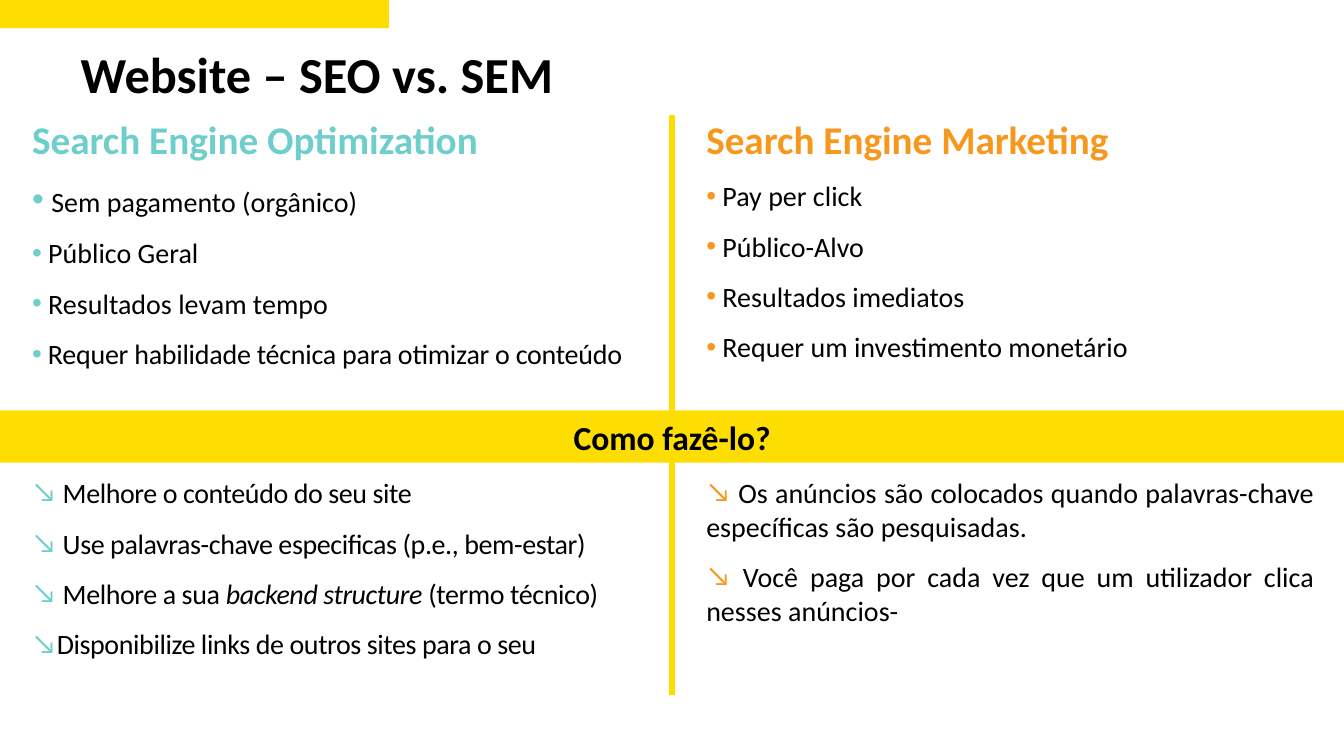
"""Builds the slide that compares SEO and SEM in two columns."""
from dataclasses import dataclass

from lxml.etree import SubElement
from pptx import Presentation
from pptx.dml.color import RGBColor
from pptx.enum.shapes import MSO_CONNECTOR as Connector, MSO_SHAPE as Preset
from pptx.enum.text import MSO_ANCHOR as Anchor, MSO_AUTO_SIZE as AutoSize, PP_ALIGN as Align
from pptx.oxml.ns import qn
from pptx.slide import Slide
from pptx.text.text import TextFrame, _Paragraph as Paragraph
from pptx.util import Cm, Pt

YELLOW = RGBColor(0xFD, 0xDE, 0x00)
TEAL = RGBColor(0x6E, 0xCE, 0xCB)
ORANGE = RGBColor(0xF7, 0x98, 0x1D)
BLACK = RGBColor(0, 0, 0)
FONT = "Calibri"
SLIDE_WIDTH, SLIDE_HEIGHT = Cm(33.87), Cm(19.05)
LEFT_COLUMN, RIGHT_COLUMN = 0.56, 17.55
COLUMN_WIDTH = 15.82
TOP_ROW, BOTTOM_ROW = 2.77, 11.86


@dataclass(frozen=True)
class Piece:
    """A stretch of text with its own size, slant and letter spacing."""
    text: str
    size: float = 20
    italic: bool = False
    spacing: int = 0


@dataclass(frozen=True)
class Block:
    """A text box with an optional heading and a bulleted list."""
    left: float
    top: float
    height: float
    color: RGBColor
    bullet: str
    items: tuple[tuple[Piece, ...], ...]
    heading: str = ""


@dataclass(frozen=True)
class Bar:
    """A yellow rectangle."""
    top: float
    width: float
    height: float


BARS = (Bar(0, 9.8, 0.71), Bar(10.34, 33.87, 1.32))
BLOCKS = (
    Block(LEFT_COLUMN, BOTTOM_ROW, 4.95, TEAL, "↘", (
        (Piece(" Melhore o conteúdo do seu site", spacing=-30),),
        (Piece(" Use palavras-chave especificas (p.e., bem-estar)", spacing=-30),),
        (Piece(" Melhore a sua ", spacing=-30),
         Piece("backend structure", italic=True, spacing=-30),
         Piece(" (termo técnico)", spacing=-30)),
        (Piece("Disponibilize links de outros sites para o seu", spacing=-30),),
    )),
    Block(RIGHT_COLUMN, BOTTOM_ROW, 4.11, ORANGE, "↘", (
        (Piece(" Os anúncios são colocados quando palavras-chave específicas são pesquisadas."),),
        (Piece(" Você paga por cada vez que um utilizador clica nesses anúncios-"),),
    )),
    Block(LEFT_COLUMN, TOP_ROW, 6.76, TEAL, "•", (
        (Piece(" ", size=24), Piece("Sem pagamento (orgânico)")),
        (Piece(" Público Geral"),),
        (Piece(" Resultados levam tempo"),),
        (Piece(" Requer habilidade técnica para otimizar o conteúdo", spacing=-20),),
    ), "Search Engine Optimization"),
    Block(RIGHT_COLUMN, TOP_ROW, 6.58, ORANGE, "•", (
        (Piece(" Pay per click"),),
        (Piece(" Público-Alvo"),),
        (Piece(" Resultados imediatos"),),
        (Piece(" Requer um investimento monetário"),),
    ), "Search Engine Marketing"),
)


def add_piece(paragraph: Paragraph, piece: Piece, color: RGBColor = BLACK, bold: bool = False) -> None:
    """Adds one formatted run to a paragraph."""
    run = paragraph.add_run()
    run.text = piece.text
    run.font.name = FONT
    run.font.size = Pt(piece.size)
    run.font.bold = bold
    run.font.italic = piece.italic
    run.font.color.rgb = color
    if piece.spacing:
        run.font._element.set("spc", str(piece.spacing))


def add_bullet(paragraph: Paragraph, character: str, color: RGBColor) -> None:
    """Gives a paragraph a coloured bullet without a hanging indent."""
    properties = paragraph._p.get_or_add_pPr()
    bullet_color = SubElement(properties, qn("a:buClr"))
    SubElement(bullet_color, qn("a:srgbClr"), val=str(color))
    SubElement(properties, qn("a:buFont"), typeface="Arial" if character == "•" else FONT)
    SubElement(properties, qn("a:buChar"), char=character)


def add_text_frame(slide: Slide, left: float, top: float, width: float, height: float) -> TextFrame:
    """Adds a wrapping text box and returns its frame."""
    text_frame = slide.shapes.add_textbox(Cm(left), Cm(top), Cm(width), Cm(height)).text_frame
    text_frame.word_wrap = True
    text_frame.auto_size = AutoSize.SHAPE_TO_FIT_TEXT
    return text_frame


def add_block(slide: Slide, block: Block) -> None:
    """Adds a heading and its bulleted list."""
    text_frame = add_text_frame(slide, block.left, block.top, COLUMN_WIDTH, block.height)
    paragraph = text_frame.paragraphs[0]
    if block.heading:
        paragraph.space_after = Pt(12)
        add_piece(paragraph, Piece(block.heading, size=28), block.color, bold=True)
    for index, pieces in enumerate(block.items):
        if index or block.heading:
            paragraph = text_frame.add_paragraph()
        paragraph.alignment = Align.JUSTIFY
        paragraph.space_after = Pt(12)
        add_bullet(paragraph, block.bullet, block.color)
        for piece in pieces:
            add_piece(paragraph, piece)


def add_bar(slide: Slide, bar: Bar) -> None:
    """Adds a yellow bar at the left edge."""
    shape = slide.shapes.add_shape(Preset.RECTANGLE, 0, Cm(bar.top), Cm(bar.width), Cm(bar.height))
    shape.shadow.inherit = False
    shape.fill.solid()
    shape.fill.fore_color.rgb = YELLOW
    shape.line.fill.background()


def add_divider(slide: Slide) -> None:
    """Adds the vertical line between the columns."""
    middle = SLIDE_WIDTH // 2
    divider = slide.shapes.add_connector(Connector.STRAIGHT, middle, Cm(2.9), middle, Cm(17.52))
    divider.line.color.rgb = YELLOW
    divider.line.width = Pt(4.5)
    SubElement(divider._element.spPr, qn("a:effectLst"))


def set_title(slide: Slide) -> None:
    """Places and formats the title placeholder."""
    title = slide.shapes.title
    title.left, title.top, title.width, title.height = Cm(1.78), Cm(0.97), Cm(17.68), Cm(1.93)
    title.text_frame.vertical_anchor = Anchor.MIDDLE
    paragraph = title.text_frame.paragraphs[0]
    paragraph.alignment = Align.LEFT
    paragraph.line_spacing = 0.9
    add_piece(paragraph, Piece("Website – SEO vs. SEM", size=36), bold=True)


def main() -> None:
    """Builds and saves the presentation."""
    presentation = Presentation()
    presentation.slide_width, presentation.slide_height = SLIDE_WIDTH, SLIDE_HEIGHT
    slide = presentation.slides.add_slide(presentation.slide_layouts[5])
    set_title(slide)
    add_divider(slide)
    for bar in BARS:
        add_bar(slide, bar)
    question = add_text_frame(slide, 9.65, 10.39, 14.58, 1.27).paragraphs[0]
    question.alignment = Align.CENTER
    add_piece(question, Piece("Como fazê-lo?", size=24), bold=True)
    for block in BLOCKS:
        add_block(slide, block)
    presentation.save("out.pptx")


if __name__ == "__main__":
    main()
